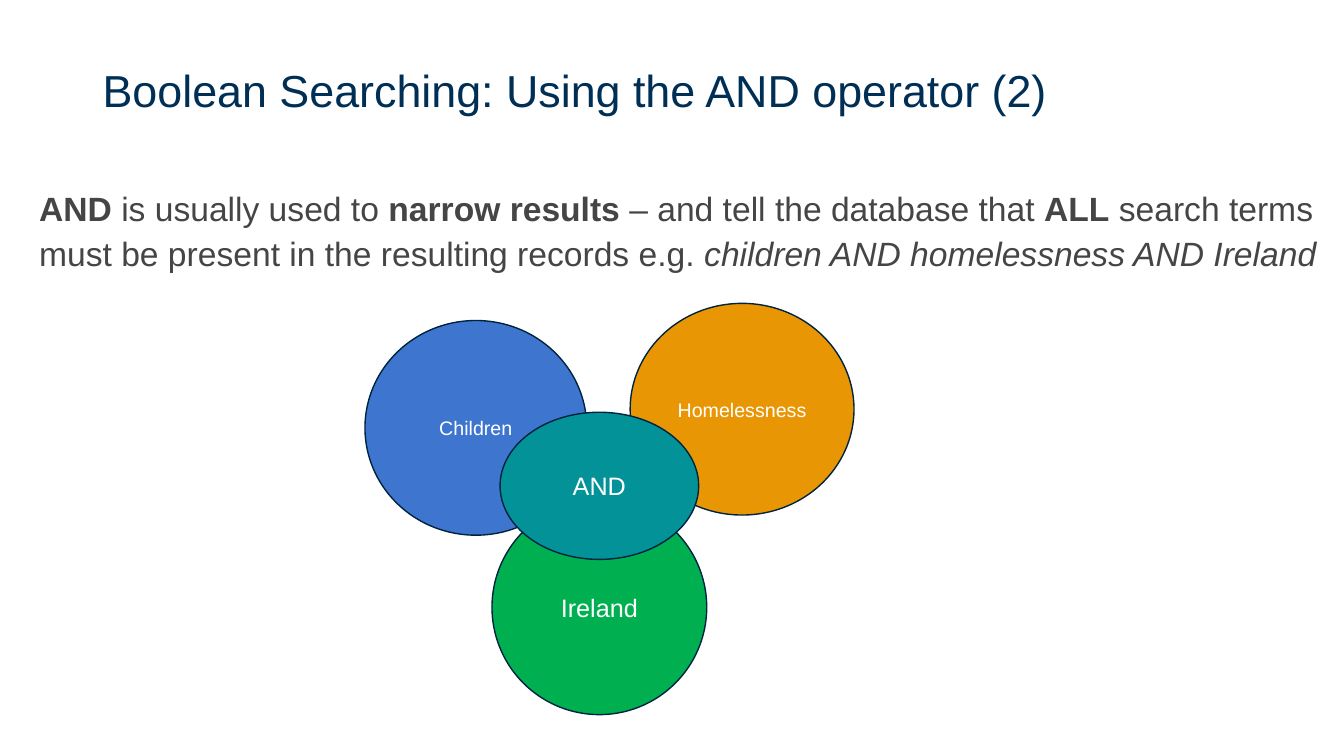
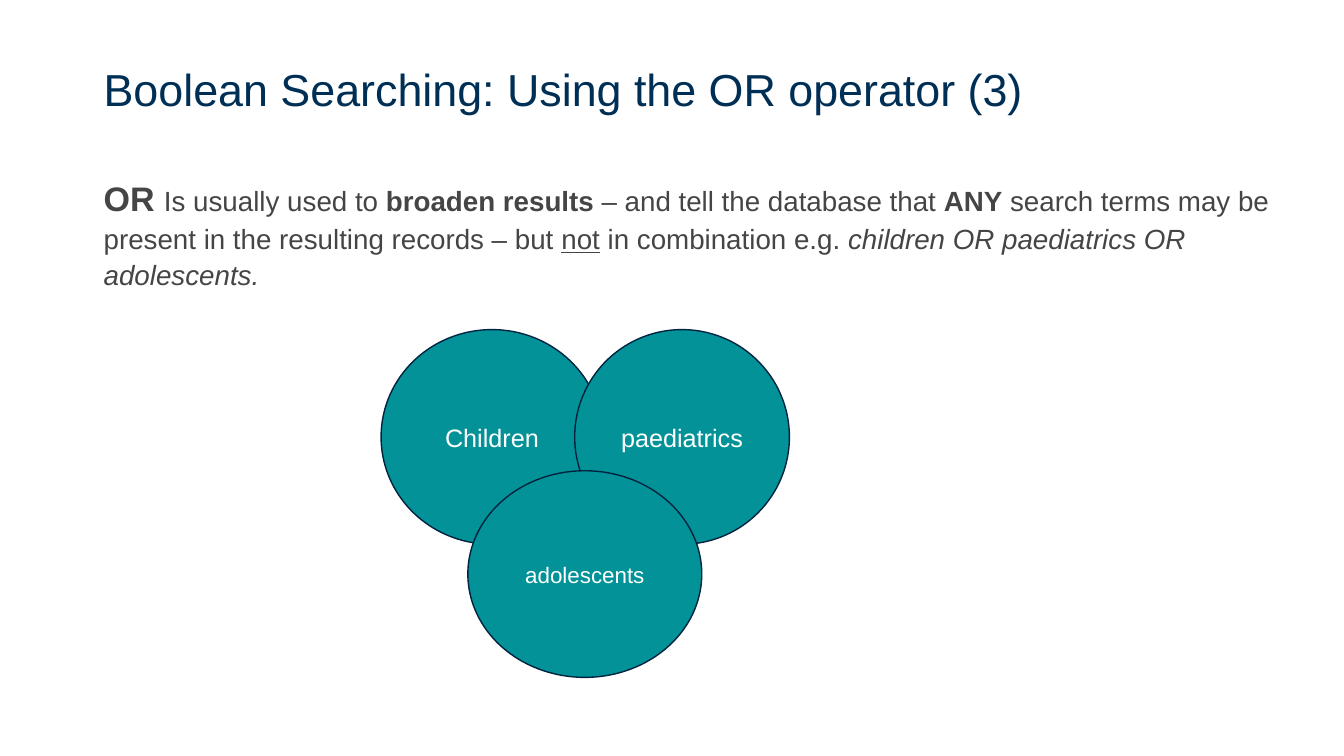
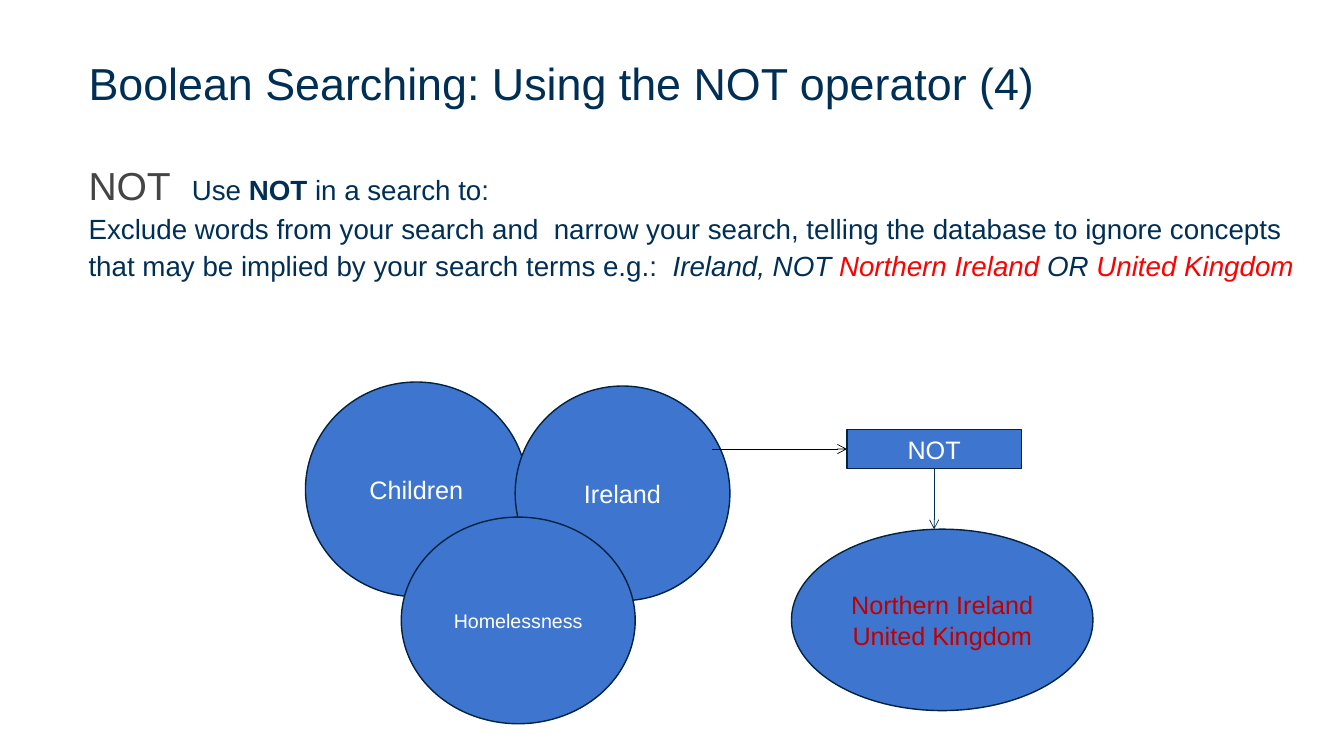
import pptx
import pptx.dml.color
import pptx.enum.shapes
import pptx.enum.text
import pptx.util
from lxml import etree
from pptx.oxml.ns import qn

Inches = pptx.util.Inches
RGBColor = pptx.dml.color.RGBColor
SHAPES = pptx.enum.shapes.MSO_SHAPE

NAVY = RGBColor(0x00, 0x2F, 0x56)
OUTLINE = RGBColor(0x00, 0x23, 0x40)
GREY = RGBColor(0x45, 0x45, 0x45)
WHITE = RGBColor(0xFF, 0xFF, 0xFF)
BLACK = RGBColor(0x00, 0x00, 0x00)
BLUE = RGBColor(0x3E, 0x75, 0xCF)
TEAL = RGBColor(0x03, 0x92, 0x98)
ORANGE = RGBColor(0xE8, 0x96, 0x04)
GREEN = RGBColor(0x00, 0xB0, 0x50)
RED = RGBColor(0xFF, 0x00, 0x00)
DARK_RED = RGBColor(0xC0, 0x00, 0x00)

FONT = "Arial"
LINE_SPACING = 1.1
BREAK = "\n"


def add_run(paragraph, text, size, color, style=""):
    run = paragraph.add_run()
    run.text = text
    run.font.name = FONT
    run.font.size = pptx.util.Pt(size)
    run.font.color.rgb = color
    run.font.bold = "b" in style
    run.font.italic = "i" in style
    run.font.underline = "u" in style


def add_passage(slide, left, top, width, height, runs):
    frame = slide.shapes.add_textbox(
        Inches(left), Inches(top), Inches(width), Inches(height)).text_frame
    frame.word_wrap = True
    paragraph = frame.paragraphs[0]
    paragraph.line_spacing = LINE_SPACING
    for text, *look in runs:
        if text == BREAK:
            paragraph.add_line_break()
        else:
            add_run(paragraph, text, *look)


def add_title(slide, left, top, title):
    add_passage(slide, left, top, 11.5, 0.65, [(title, 32, NAVY)])


def add_term(slide, left, top, width, height, terms, fill, size=18,
             color=WHITE, outline=SHAPES.OVAL):
    term = slide.shapes.add_shape(
        outline, Inches(left), Inches(top), Inches(width), Inches(height))
    term.shadow.inherit = False
    term.fill.solid()
    term.fill.fore_color.rgb = fill
    term.line.color.rgb = OUTLINE
    term.line.width = pptx.util.Pt(1)
    frame = term.text_frame
    frame.vertical_anchor = pptx.enum.text.MSO_ANCHOR.MIDDLE
    for index, text in enumerate(terms.split(BREAK)):
        paragraph = frame.add_paragraph() if index else frame.paragraphs[0]
        paragraph.alignment = pptx.enum.text.PP_ALIGN.CENTER
        add_run(paragraph, text, size, color)
    return term


def add_arrow(slide, start_x, start_y, end_x, end_y, color):
    arrow = slide.shapes.add_connector(
        pptx.enum.shapes.MSO_CONNECTOR.STRAIGHT, start_x, start_y, end_x, end_y)
    arrow.line.color.rgb = color
    arrow.line.width = pptx.util.Pt(0.5)
    head = etree.SubElement(arrow.line._get_or_add_ln(), qn("a:tailEnd"))
    head.set("type", "arrow")
    etree.SubElement(arrow._element.spPr, qn("a:effectLst"))
    return arrow


def build_and_slide(slide):
    add_term(slide, 4.88, 4.96, 2.13, 2.13, "Ireland", GREEN)
    add_title(slide, 0.92, 0.52, "Boolean Searching: Using the AND operator (2)")
    add_passage(slide, 0.29, 1.78, 12.96, 1.2, [
        ("AND", 24, GREY, "b"),
        (" is usually used to ", 24, GREY),
        ("narrow results ", 24, GREY, "b"),
        ("– and tell the database that ", 24, GREY),
        ("ALL", 24, GREY, "b"),
        (" search terms must be present in the resulting records e.g. ", 24, GREY),
        ("children AND homelessness AND Ireland", 24, GREY, "i"),
    ])
    add_term(slide, 3.62, 3.18, 2.2, 2.13, "Children", BLUE, 14)
    add_term(slide, 6.25, 3.01, 2.22, 2.1, "Homelessness", ORANGE, 14)
    add_term(slide, 4.96, 4.09, 1.97, 1.46, "AND", TEAL)


def build_or_slide(slide):
    add_title(slide, 0.93, 0.51, "Boolean Searching: Using the OR operator (3)")
    add_passage(slide, 0.93, 1.67, 12.4, 1.28, [
        ("OR ", 24.3, GREY, "b"),
        ("Is usually used to ", 19.8, GREY),
        ("broaden results ", 19.8, GREY, "b"),
        ("– and tell the database that ", 19.8, GREY),
        ("ANY", 19.8, GREY, "b"),
        (" search terms may be present in the resulting records – but ", 19.8, GREY),
        ("not", 19.8, GREY, "u"),
        (" in combination e.g. ", 19.8, GREY),
        ("children OR paediatrics OR adolescents.", 19.8, GREY, "i"),
    ])
    add_term(slide, 3.78, 3.27, 2.2, 2.13, "Children", TEAL)
    add_term(slide, 5.7, 3.27, 2.13, 2.13, "paediatrics", TEAL)
    add_term(slide, 4.64, 4.67, 2.32, 2.05, "adolescents", TEAL, 16)


def build_not_slide(slide):
    add_title(slide, 0.78, 0.45, "Boolean Searching: Using the NOT operator (4)")
    add_passage(slide, 0.78, 1.51, 12.21, 1.5, [
        ("NOT  ", 27.9, GREY),
        ("Use ", 19.8, NAVY),
        ("NOT", 19.8, NAVY, "b"),
        (" in a search to:", 19.8, NAVY),
        (BREAK,),
        ("Exclude words from your search and  narrow your search, telling the "
         "database to ignore concepts that may be implied by your search terms "
         "e.g.:  ", 19.8, NAVY),
        ("Ireland, NOT ", 19.8, NAVY, "i"),
        ("Northern Ireland ", 19.8, RED, "i"),
        ("OR ", 19.8, NAVY, "i"),
        ("United Kingdom", 19.8, RED, "i"),
    ])
    add_term(slide, 3.03, 3.79, 2.2, 2.13, "Children", BLUE)
    add_term(slide, 5.11, 3.83, 2.13, 2.13, "Ireland", BLUE)
    add_term(slide, 3.98, 5.13, 2.32, 2.05, "Homelessness", BLUE, 14)
    operator = add_term(slide, 8.4, 4.26, 1.73, 0.39, "NOT", BLUE,
                        outline=SHAPES.RECTANGLE)
    excluded = add_term(slide, 7.85, 5.25, 2.99, 1.8,
                        "Northern Ireland\nUnited Kingdom", BLUE, color=DARK_RED)

    middle_x = operator.left + operator.width // 2
    middle_y = operator.top + operator.height // 2
    to_operator = add_arrow(slide, Inches(7.06), middle_y,
                            operator.left, middle_y, BLACK)
    to_operator.end_connect(operator, 1)
    to_excluded = add_arrow(slide, middle_x, operator.top + operator.height,
                            middle_x, excluded.top, NAVY)
    to_excluded.begin_connect(operator, 2)


def main():
    deck = pptx.Presentation()
    deck.slide_width = Inches(13.33)
    deck.slide_height = Inches(7.5)
    for build in (build_and_slide, build_or_slide, build_not_slide):
        build(deck.slides.add_slide(deck.slide_layouts[6]))
    deck.save("out.pptx")


if __name__ == "__main__":
    main()
